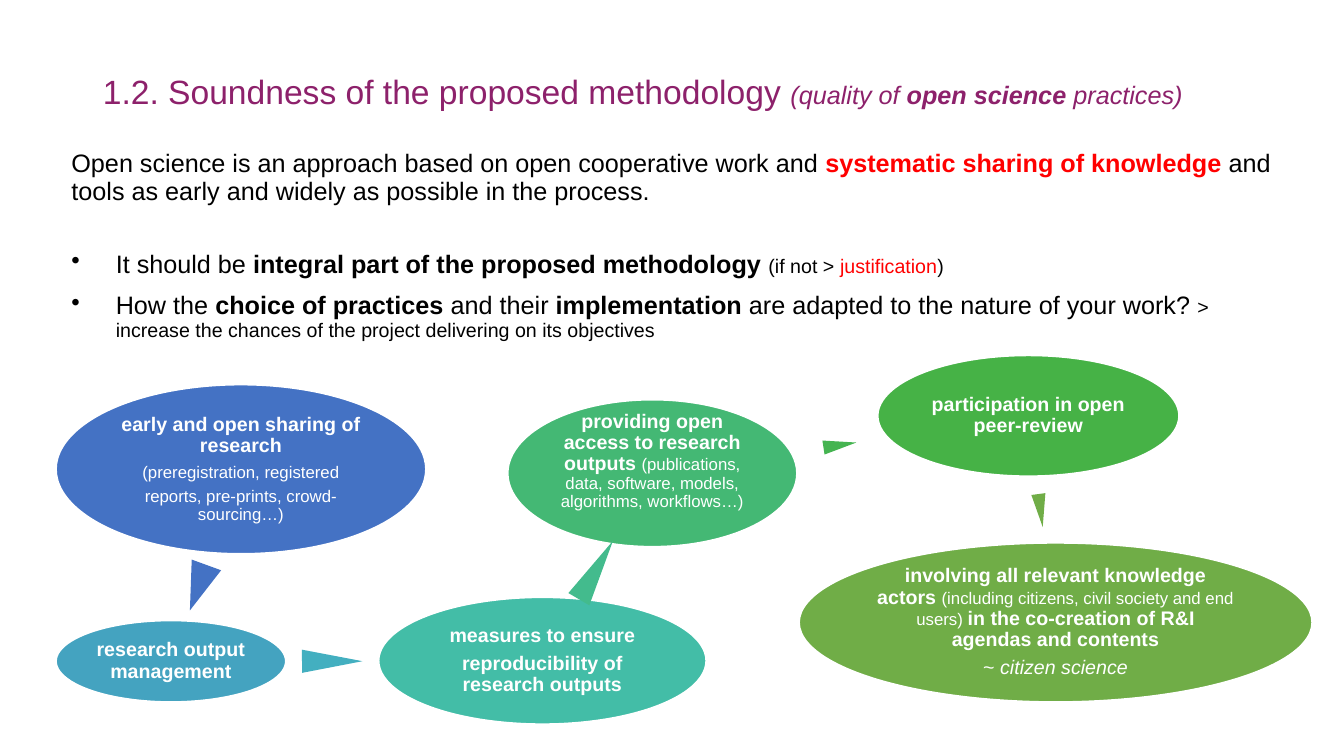
from dataclasses import dataclass

import pptx
import pptx.dml.color
import pptx.enum.shapes
import pptx.enum.text
import pptx.oxml
import pptx.oxml.ns
import pptx.shapes.autoshape
import pptx.slide
import pptx.text.text
import pptx.util

RGBColor = pptx.dml.color.RGBColor
Inches = pptx.util.Inches
Pt = pptx.util.Pt
MSO_SHAPE = pptx.enum.shapes.MSO_SHAPE
PP_ALIGN = pptx.enum.text.PP_ALIGN
MSO_ANCHOR = pptx.enum.text.MSO_ANCHOR

FONT = "Arial"
BLACK = RGBColor(0x00, 0x00, 0x00)
WHITE = RGBColor(0xFF, 0xFF, 0xFF)
RED = RGBColor(0xFF, 0x00, 0x00)
PURPLE = RGBColor(0x8D, 0x21, 0x6B)
BLUE = RGBColor(0x44, 0x72, 0xC4)
SKY = RGBColor(0x44, 0xA3, 0xC0)
CYAN = RGBColor(0x43, 0xAF, 0xC0)
TEAL = RGBColor(0x43, 0xBD, 0xA7)
SEA_GREEN = RGBColor(0x43, 0xBB, 0x8D)
MINT = RGBColor(0x44, 0xB8, 0x74)
LEAF = RGBColor(0x45, 0xB4, 0x51)
GREEN = RGBColor(0x46, 0xB2, 0x46)
OLIVE = RGBColor(0x70, 0xAD, 0x47)


@dataclass(frozen=True)
class Span:
    text: str
    size: float = 14
    bold: bool = False
    italic: bool = False
    color: RGBColor = WHITE


@dataclass(frozen=True)
class BodyParagraph:
    spans: list[Span]
    bullet: bool = False
    space_before: float = 0


@dataclass(frozen=True)
class Box:
    left: float
    top: float
    width: float
    height: float


@dataclass(frozen=True)
class Practice:
    box: Box
    fill: RGBColor
    paragraphs: list[list[Span]]
    bottom_inset: float = 0.02


@dataclass(frozen=True)
class Pointer:
    box: Box
    rotation: float
    fill: RGBColor


TITLE = [
    Span("1.2. Soundness of the proposed methodology ", 24, color=PURPLE),
    Span("(quality of ", 18, italic=True, color=PURPLE),
    Span("open science", 18, bold=True, italic=True, color=PURPLE),
    Span(" practices)", 18, italic=True, color=PURPLE),
]

BODY = [
    BodyParagraph([
        Span("Open science is an approach based on open cooperative work and ", 18, color=BLACK),
        Span("systematic sharing of knowledge", 18, bold=True, color=RED),
        Span(" and tools as early and widely as possible in the process.", 18, color=BLACK),
    ]),
    BodyParagraph([
        Span("It should be ", 18, color=BLACK),
        Span("integral part of the proposed methodology ", 18, bold=True, color=BLACK),
        Span("(if not > ", color=BLACK),
        Span("justification", color=RED),
        Span(")", color=BLACK),
    ], bullet=True, space_before=33),
    BodyParagraph([
        Span("How the ", 18, color=BLACK),
        Span("choice of practices ", 18, bold=True, color=BLACK),
        Span("and their ", 18, color=BLACK),
        Span("implementation", 18, bold=True, color=BLACK),
        Span(" are adapted to the nature of your work? ", 18, color=BLACK),
        Span("> increase the chances of the project delivering on its objectives", color=BLACK),
    ], bullet=True, space_before=10),
]

PRACTICES = [
    Practice(Box(0.55, 3.81, 3.68, 1.69), BLUE, [
        [Span("early and open sharing of research", bold=True)],
        [Span("(preregistration, registered", 12)],
        [Span("reports, pre-prints, crowd-sourcing…)", 12)],
    ]),
    Practice(Box(0.55, 6.15, 2.29, 0.82), SKY, [[Span("research output management", bold=True)]]),
    Practice(Box(3.75, 5.92, 3.26, 1.27), TEAL, [
        [Span("measures to ensure", bold=True)],
        [Span("reproducibility of research outputs", bold=True)],
    ]),
    Practice(Box(5.03, 3.96, 2.88, 1.47), MINT, [[
        Span("providing open access to research outputs ", bold=True),
        Span("(publications, data, software, models, algorithms, workflows…)", 12),
    ]], bottom_inset=0.26),
    Practice(Box(8.7, 3.52, 3, 1.21), GREEN, [[Span("participation in open peer-review", bold=True)]]),
    Practice(Box(7.92, 5.38, 5.1, 1.59), OLIVE, [
        [
            Span("involving all relevant knowledge actors ", bold=True),
            Span("(including citizens, civil society and end users) ", 12),
            Span("in the co-creation of R&I agendas and contents", bold=True),
        ],
        [Span("~ "), Span("citizen science", italic=True)],
    ]),
]

POINTERS = [
    Pointer(Box(1.81, 5.59, 0.31, 0.48), 200, BLUE),
    Pointer(Box(3.18, 6.26, 0.23, 0.6), 89.9, CYAN),
    Pointer(Box(5.79, 5.32, 0.24, 0.67), 30.3, SEA_GREEN),
    Pointer(Box(8.26, 4.25, 0.14, 0.33), 81.3, LEAF),
    Pointer(Box(10.25, 4.9, 0.14, 0.33), 172.5, OLIVE),
]


def add_spans(paragraph: pptx.text.text._Paragraph, spans: list[Span]) -> None:
    paragraph.line_spacing = 0.9
    for span in spans:
        run = paragraph.add_run()
        run.text = span.text
        run.font.name = FONT
        run.font.size = Pt(span.size)
        run.font.bold = span.bold
        run.font.italic = span.italic
        run.font.color.rgb = span.color


def add_paragraph(frame: pptx.text.text.TextFrame, index: int) -> pptx.text.text._Paragraph:
    """Return the frame's existing first paragraph, or a new one after it."""
    return frame.add_paragraph() if index else frame.paragraphs[0]


def add_title(slide: pptx.slide.Slide) -> None:
    title = slide.shapes.title
    title.left, title.top = Inches(0.92), Inches(0.4)
    title.width, title.height = Inches(11.5), Inches(1.06)
    frame = title.text_frame
    frame.auto_size = pptx.enum.text.MSO_AUTO_SIZE.NONE
    frame.vertical_anchor = MSO_ANCHOR.MIDDLE
    frame.paragraphs[0].alignment = PP_ALIGN.LEFT
    add_spans(frame.paragraphs[0], TITLE)


def add_body(slide: pptx.slide.Slide) -> None:
    body = slide.shapes.add_textbox(Inches(0.55), Inches(1.45), Inches(12.22), Inches(2.1))
    frame = body.text_frame
    frame.word_wrap = True
    for index, content in enumerate(BODY):
        paragraph = add_paragraph(frame, index)
        properties = paragraph._p.get_or_add_pPr()
        properties.set("marL", str(Inches(0.5 if content.bullet else 0.06)))
        if content.bullet:
            properties.set("indent", str(Inches(-0.44)))
            bullet = pptx.oxml.parse_xml(f'<a:buChar {pptx.oxml.ns.nsdecls("a")} char="•"/>')
            properties.append(bullet)
        paragraph.space_before = Pt(content.space_before)
        add_spans(paragraph, content.spans)


def add_filled_shape(slide: pptx.slide.Slide, kind: MSO_SHAPE, box: Box,
                     fill: RGBColor) -> pptx.shapes.autoshape.Shape:
    shape = slide.shapes.add_shape(
        kind, Inches(box.left), Inches(box.top), Inches(box.width), Inches(box.height))
    shape.shadow.inherit = False
    shape.fill.solid()
    shape.fill.fore_color.rgb = fill
    return shape


def add_practice(slide: pptx.slide.Slide, practice: Practice) -> None:
    ellipse = add_filled_shape(slide, MSO_SHAPE.OVAL, practice.box, practice.fill)
    ellipse.line.color.rgb = WHITE
    ellipse.line.width = Pt(2)
    frame = ellipse.text_frame
    frame.word_wrap = True
    frame.vertical_anchor = MSO_ANCHOR.MIDDLE
    frame.margin_left = frame.margin_right = frame.margin_top = Inches(0.02)
    frame.margin_bottom = Inches(practice.bottom_inset)
    for index, spans in enumerate(practice.paragraphs):
        paragraph = add_paragraph(frame, index)
        paragraph.alignment = PP_ALIGN.CENTER
        paragraph.space_after = Pt(0.35 * spans[0].size)
        add_spans(paragraph, spans)


def add_pointer(slide: pptx.slide.Slide, pointer: Pointer) -> None:
    triangle = add_filled_shape(slide, MSO_SHAPE.ISOSCELES_TRIANGLE, pointer.box, pointer.fill)
    triangle.line.fill.background()
    triangle.rotation = pointer.rotation


def main() -> None:
    presentation = pptx.Presentation()
    presentation.slide_width, presentation.slide_height = Inches(13.33), Inches(7.5)
    slide = presentation.slides.add_slide(presentation.slide_layouts[5])
    add_title(slide)
    add_body(slide)
    for practice in PRACTICES:
        add_practice(slide, practice)
    for pointer in POINTERS:
        add_pointer(slide, pointer)
    presentation.save("out.pptx")


if __name__ == "__main__":
    main()
